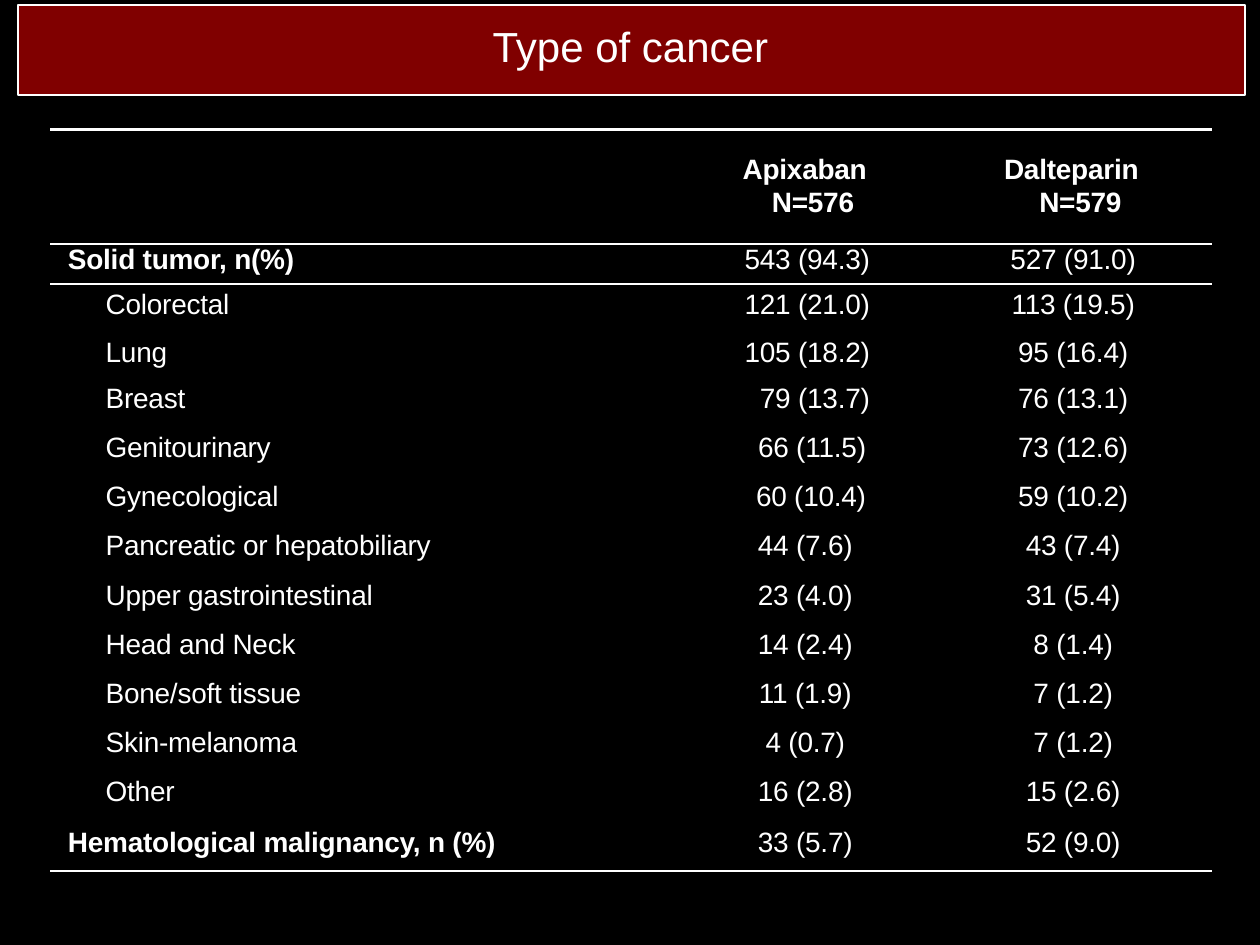
from lxml import etree
from pptx import Presentation
from pptx import util as u
from pptx.dml import color
from pptx.enum import shapes, text
from pptx.oxml import ns

HUES = {"black": "000000", "white": "FFFFFF", "red": "800000"}
SIDE = text.PP_ALIGN
BARE = "{2D5ABB26-0587-4C30-8999-92F81FD0307C}"
HEADS = [("Apixaban\vN=576", 1.93, -0.59), ("Dalteparin\vN=579", 2.11, -0.71)]
ROWS = [
    ("Solid tumor, n(%)", "543 (94.3)", "527 (91.0)"),
    ("Colorectal", "121 (21.0)", "113 (19.5)"),
    ("Lung", "105 (18.2)", "95 (16.4)"),
    ("Breast", "79 (13.7)", "76 (13.1)"),
    ("Genitourinary", "66 (11.5)", "73 (12.6)"),
    ("Gynecological", "60 (10.4)", "59 (10.2)"),
    ("Pancreatic or hepatobiliary", "44 (7.6)", "43 (7.4)"),
    ("Upper gastrointestinal", "23 (4.0)", "31 (5.4)"),
    ("Head and Neck", "14 (2.4)", "8 (1.4)"),
    ("Bone/soft tissue", "11 (1.9)", "7 (1.2)"),
    ("Skin-melanoma", "4 (0.7)", "7 (1.2)"),
    ("Other", "16 (2.8)", "15 (2.6)"),
    ("Hematological malignancy, n (%)", "33 (5.7)", "52 (9.0)"),
]
LAST = len(ROWS)
WIDE = [12.62, 5.21, 5.59]
TALL = [2.31, 0.81, 0.99, 0.91] + [0.99] * 8 + [1.02, 0.99]


def tint(fill, hue):
    """Give a fill one solid colour."""
    fill.solid()
    fill.fore_color.rgb = color.RGBColor.from_string(HUES[hue])


def write(frame, words, size=16, bold=False, side=SIDE.LEFT, left=0, hang=0,
          lead=None, track=-0.1):
    """Put one formatted paragraph in a text frame."""
    frame.text = words
    para = frame.paragraphs[0]
    para.alignment = side
    para.line_spacing = lead
    props = para._p.get_or_add_pPr()
    props.set("marL", str(u.Cm(left)))
    props.set("indent", str(u.Cm(hang)))
    for run in para.runs:
        run.font.name = "Arial"
        run.font.size = u.Pt(size)
        run.font.bold = bold
        tint(run.font.fill, "white")
        run._r.get_or_add_rPr().set("spc", str(round(track * 100)))


def rule(cell, edges):
    """Draw white lines on the named edges of a cell."""
    props = cell._tc.get_or_add_tcPr()
    for spot, edge in enumerate(edges):
        line = etree.Element(ns.qn("a:ln" + edge), w=str(u.Pt(1.5)))
        fill = etree.SubElement(line, ns.qn("a:solidFill"))
        etree.SubElement(fill, ns.qn("a:srgbClr"), val=HUES["white"])
        props.insert(spot, line)


def block(slide, hue, x, y, w, h):
    """Place a plain filled box without a line."""
    box = slide.shapes.add_shape(
        shapes.MSO_SHAPE.RECTANGLE, u.Cm(x), u.Cm(y), u.Cm(w), u.Cm(h))
    box.shadow.inherit = False
    tint(box.fill, hue)
    box.line.fill.background()
    return box


def banner(slide, x, y, w, h):
    """Place the red bar and the title on it."""
    bar = block(slide, "red", x, y, w, h)
    tint(bar.line.fill, "white")
    bar.line.width = u.Pt(1)
    title = slide.shapes.title
    title.left, title.top = u.Cm(x + 9.54), u.Cm(y + 0.28)
    title.width, title.height = u.Cm(5.66), u.Cm(1.09)
    frame = title.text_frame
    frame.margin_left = frame.margin_right = frame.margin_bottom = 0
    frame.margin_top = u.Cm(0.03)
    frame.vertical_anchor = text.MSO_ANCHOR.TOP
    frame.auto_size = text.MSO_AUTO_SIZE.NONE
    frame.word_wrap = False
    write(frame, "Type of cancer", size=24, left=0.03, lead=1.0, track=0)
    title.element.getparent().append(title.element)


def grid(slide, x, y):
    """Place the table of cancer types with its rules."""
    shape = slide.shapes.add_table(
        len(TALL), len(WIDE), u.Cm(x), u.Cm(y), u.Cm(sum(WIDE)), u.Cm(sum(TALL)))
    table = shape.table
    table.first_row = table.horz_banding = False
    next(shape.element.iter(ns.qn("a:tableStyleId"))).text = BARE
    for col, width in zip(table.columns, WIDE):
        col.width = u.Cm(width)
    for row, height in zip(table.rows, TALL):
        row.height = u.Cm(height)
    for cell in table.iter_cells():
        tint(cell.fill, "black")
        cell.margin_left = cell.margin_right = cell.margin_bottom = 0
        cell.margin_top = u.Cm(0.1)
    for n in range(len(WIDE)):
        rule(table.cell(0, n), "TB")
        rule(table.cell(1, n), "T")
        rule(table.cell(LAST, n), "B")
        table.cell(0, n).margin_top = u.Cm(0.45)
        table.cell(1, n).margin_top = u.Cm(0.01)
        table.cell(3, n).margin_top = u.Cm(0.07)
    for n, (words, left, hang) in enumerate(HEADS, 1):
        write(table.cell(0, n).text_frame, words, bold=True, left=left,
              hang=hang, lead=u.Pt(19))
    for r, (name, *vals) in enumerate(ROWS, 1):
        main = r in (1, LAST)
        write(table.cell(r, 0).text_frame, name, bold=main, left=0.36 if main else 1.12)
        for n, val in enumerate(vals, 1):
            cell = table.cell(r, n)
            flush = n == 1 and r <= 6
            if flush:
                cell.margin_right = u.Cm(1.3 if r <= 4 else 1.38)
            write(cell.text_frame, val, side=SIDE.RIGHT if flush else SIDE.CENTER)


def main():
    """Build and save the slide."""
    deck = Presentation()
    deck.slide_width, deck.slide_height = u.Cm(25.4), u.Cm(19.05)
    slide = deck.slides.add_slide(deck.slide_layouts[5])
    block(slide, "black", 0, 0, 25.4, 19.05)
    banner(slide, 0.36, 0.1, 24.74, 1.82)
    grid(slide, 1.01, 2.61)
    deck.save("out.pptx")


if __name__ == "__main__":
    main()
